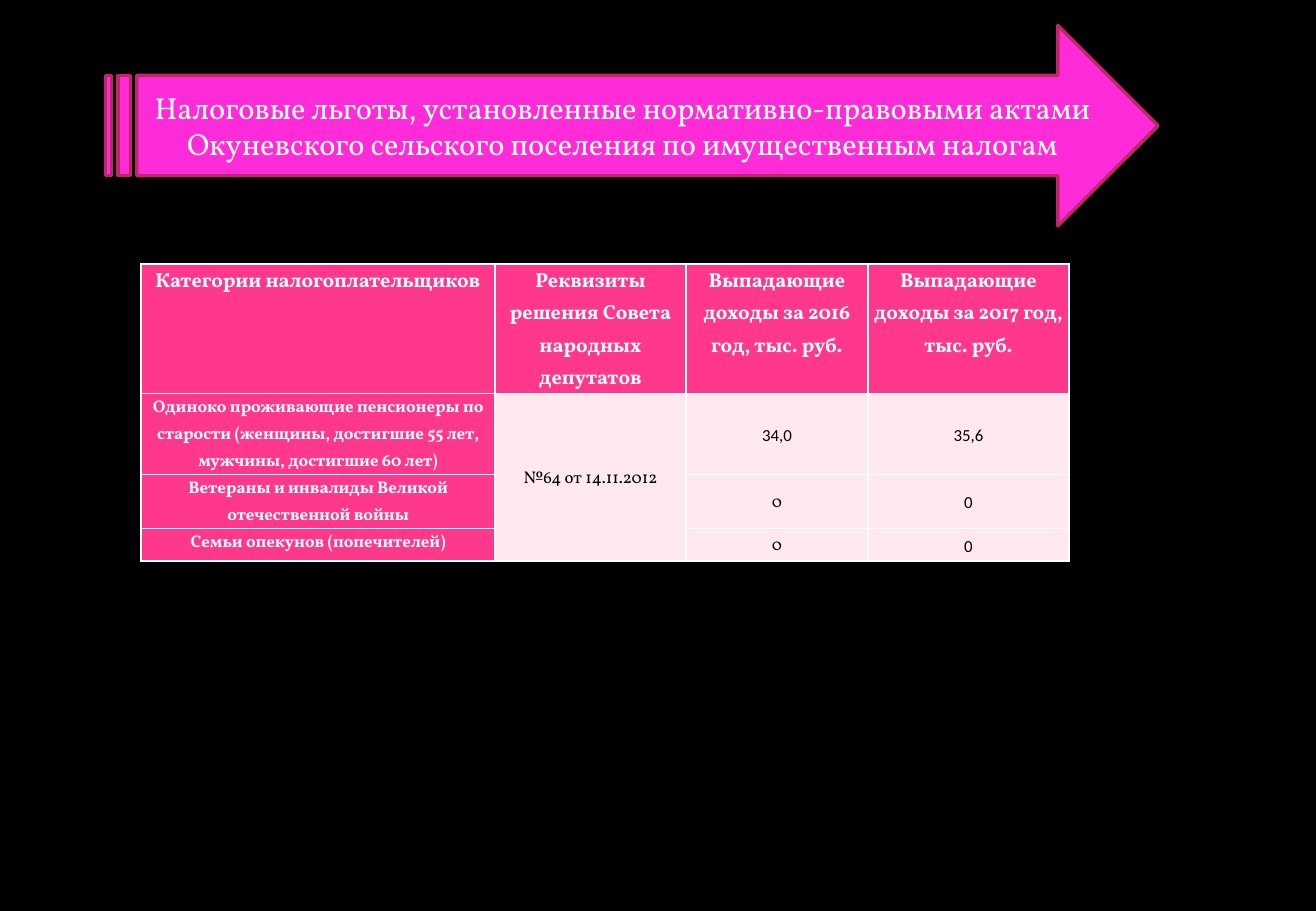
from lxml.etree import SubElement
from pptx import Presentation
from pptx.dml.color import RGBColor
from pptx.enum.shapes import MSO_SHAPE
from pptx.enum.text import MSO_ANCHOR, PP_ALIGN
from pptx.oxml.ns import qn
from pptx.util import Pt

WHITE, BLACK = "FFFFFF", "000000"
HEADER_PINK, PALE_PINK = "FF388C", "FFE8EE"
ARROW_FILL, ARROW_LINE = "FF2BD8", "BD2968"
SERIF, SANS = "Vollkorn", "Calibri"


def paint(color_format, value):
    color_format.rgb = RGBColor.from_string(value)


def write(frame, text, size=10, font=SERIF, color=WHITE, bold=False, spacing=None):
    frame.word_wrap = True
    paragraph = frame.paragraphs[0]
    paragraph.alignment = PP_ALIGN.CENTER
    paragraph.line_spacing = spacing
    run = paragraph.add_run()
    run.text = text
    run.font.size = Pt(size)
    run.font.name = font
    run.font.bold = bold
    paint(run.font.color, color)


class TaxSlide:
    def __init__(self, deck):
        self.slide = deck.slides.add_slide(deck.slide_layouts[6])
        background = self.slide.background.fill
        background.solid()
        paint(background.fore_color, BLACK)

    def arrow(self, text, left, top, width, height):
        banner = self.slide.shapes.add_shape(
            MSO_SHAPE.STRIPED_RIGHT_ARROW, Pt(left), Pt(top), Pt(width), Pt(height))
        banner.shadow.inherit = False
        banner.fill.solid()
        paint(banner.fill.fore_color, ARROW_FILL)
        paint(banner.line.color, ARROW_LINE)
        banner.line.width = Pt(2)
        banner.text_frame.vertical_anchor = MSO_ANCHOR.MIDDLE
        write(banner.text_frame, text, size=18)

    def cell(self, cell, text, fill, anchor, **text_format):
        cell.margin_left = cell.margin_right = Pt(3)
        cell.margin_top = cell.margin_bottom = 0
        cell.vertical_anchor = anchor
        properties = cell._tc.get_or_add_tcPr()
        for side in ("a:lnL", "a:lnR", "a:lnT", "a:lnB"):
            border = SubElement(properties, qn(side), w=str(Pt(1)))
            solid = SubElement(border, qn("a:solidFill"))
            SubElement(solid, qn("a:srgbClr"), val=WHITE)
        cell.fill.solid()
        paint(cell.fill.fore_color, fill)
        if text:
            write(cell.text_frame, text, spacing=1.15, **text_format)

    def table(self, rows, left, top, widths, heights):
        grid = self.slide.shapes.add_table(
            len(heights), len(widths), Pt(left), Pt(top),
            Pt(sum(widths)), Pt(sum(heights))).table
        for column, width in zip(grid.columns, widths):
            column.width = Pt(width)
        for row, height in zip(grid.rows, heights):
            row.height = Pt(height)
        for r, row in enumerate(rows):
            for c, (text, font) in enumerate(row):
                if r == 0 or c == 0:
                    self.cell(grid.cell(r, c), text, HEADER_PINK, MSO_ANCHOR.TOP,
                              size=10 if r else 12, font=font, bold=True)
                else:
                    self.cell(grid.cell(r, c), text, PALE_PINK, MSO_ANCHOR.MIDDLE,
                              font=font, color=BLACK)
        grid.cell(1, 1).merge(grid.cell(len(heights) - 1, 1))


BENEFITS = [
    [("Категории налогоплательщиков", SERIF),
     ("Реквизиты решения Совета народных депутатов", SERIF),
     ("Выпадающие доходы за 2016 год, тыс. руб.", SERIF),
     ("Выпадающие доходы за 2017 год, тыс. руб.", SERIF)],
    [("Одиноко проживающие пенсионеры по старости "
      "(женщины, достигшие 55 лет, мужчины, достигшие 60 лет)", SERIF),
     ("№64 от 14.11.2012", SERIF), ("34,0", SANS), ("35,6", SANS)],
    [("Ветераны и инвалиды Великой отечественной войны", SERIF),
     ("", SERIF), ("0", SERIF), ("0", SANS)],
    [("Семьи опекунов (попечителей)", SERIF),
     ("", SERIF), ("0", SERIF), ("0", SANS)],
]


def main():
    deck = Presentation()
    deck.slide_width, deck.slide_height = Pt(780), Pt(540)
    page = TaxSlide(deck)
    page.table(BENEFITS, 83.5, 156.5, widths=[210, 113, 108, 119],
               heights=[76.5, 48, 32, 19.5])
    page.arrow("Налоговые льготы, установленные нормативно-правовыми актами "
               "Окуневского сельского поселения по имущественным налогам",
               62.5, 15, 624, 119)
    deck.save("out.pptx")


if __name__ == "__main__":
    main()
